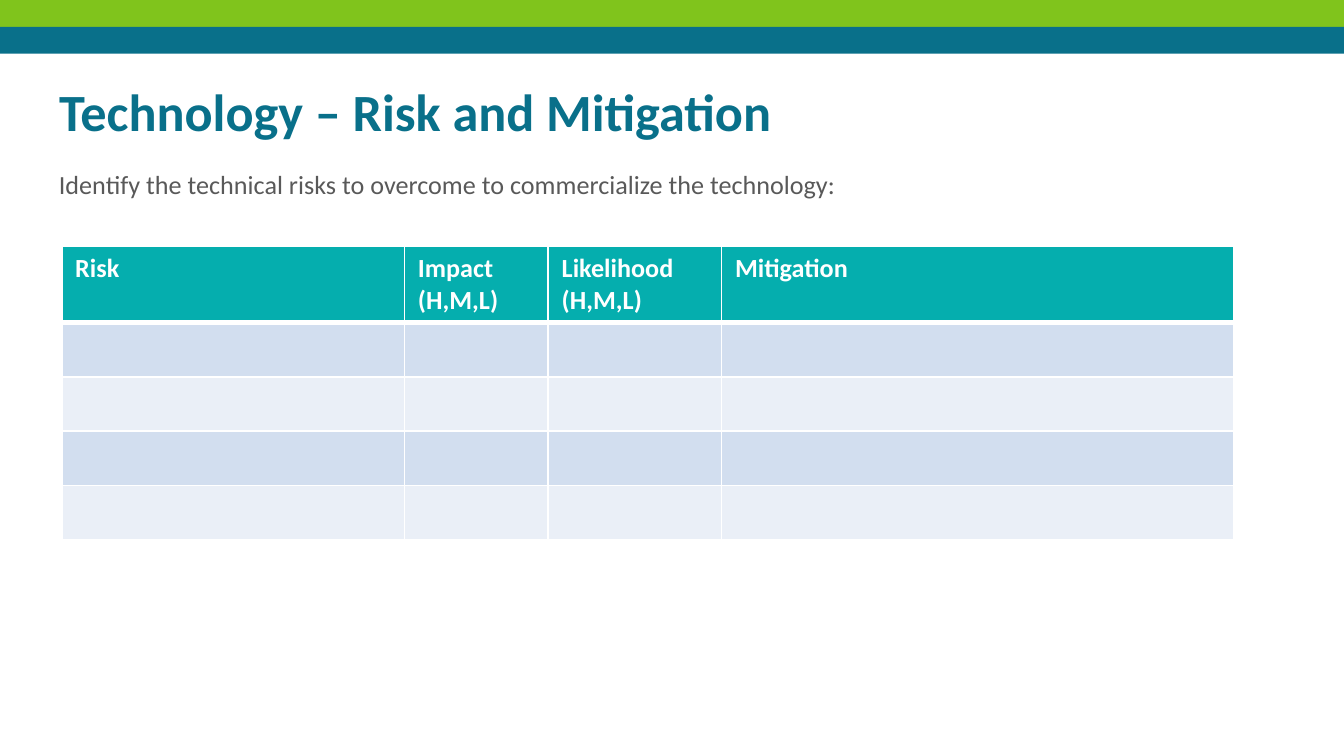
from lxml import etree
from pptx import Presentation
from pptx.dml.color import RGBColor
from pptx.enum.shapes import MSO_SHAPE
from pptx.enum.text import MSO_ANCHOR, PP_ALIGN
from pptx.oxml.ns import qn
from pptx.util import Inches, Pt

RECT = MSO_SHAPE.RECTANGLE
TOP, LEFT = MSO_ANCHOR.TOP, PP_ALIGN.LEFT

BLUE = RGBColor(0x09, 0x70, 0x8A)
GREEN = RGBColor(0x80, 0xC4, 0x1C)
TEAL = RGBColor(0x05, 0xAE, 0xAE)
GRAY = RGBColor(0x59, 0x59, 0x59)
WHITE = RGBColor(0xFF, 0xFF, 0xFF)
BANDS = [RGBColor(0xD2, 0xDE, 0xEF), RGBColor(0xEA, 0xEF, 0xF7)]

TITLE = "Technology – Risk and Mitigation"
PROMPT = "Identify the technical risks to overcome to commercialize the technology:"
COLUMNS = [("Risk", 2.55), ("Impact (H,M,L)", 1.07),
           ("Likelihood (H,M,L)", 1.29), ("Mitigation", 3.81)]
RISK_ROWS = 4
STRIPES = [GREEN, BLUE]

SLIDE_W = 10
SLIDE_H = SLIDE_W * 9 / 16
STRIPE_H = 0.2
TABLE_X, TABLE_Y, TABLE_H, HEADER_H = 0.46, 1.83, 2.19, 0.57

TITLE_FONT = {"name": "Calibri", "size": Pt(28), "bold": True}
BODY_FONT = {"name": "Calibri", "size": Pt(14), "bold": False}
HEADER_FONT = {**BODY_FONT, "bold": True}


def write(tf, text, font, color):
    tf.word_wrap = True
    p = tf.paragraphs[0]
    p.alignment = LEFT
    r = p.add_run()
    r.text = text
    for name, value in font.items():
        setattr(r.font, name, value)
    r.font.color.rgb = color


def set_borders(cell, widths):
    """Draw white cell borders; widths maps side tags to points."""
    tc_pr = cell._tc.get_or_add_tcPr()
    for i, (side, width) in enumerate(widths.items()):
        ln = etree.Element(qn(f"a:{side}"), w=str(Pt(width)))
        fill = etree.SubElement(ln, qn("a:solidFill"))
        etree.SubElement(fill, qn("a:srgbClr"), val=str(WHITE))
        tc_pr.insert(i, ln)


prs = Presentation()
prs.slide_width, prs.slide_height = Inches(SLIDE_W), Inches(SLIDE_H)
s = prs.slides.add_slide(prs.slide_layouts[5])

for i, color in enumerate(STRIPES):
    sp = s.shapes.add_shape(RECT, 0, Inches(i * STRIPE_H),
                            Inches(SLIDE_W), Inches(STRIPE_H))
    sp.shadow.inherit = False
    sp.fill.solid()
    sp.fill.fore_color.rgb = color
    sp.line.fill.background()

title = s.shapes.title
title.left, title.top = Inches(0.34), Inches(0.49)
title.width, title.height = Inches(9.32), Inches(0.63)
tf = title.text_frame
tf.vertical_anchor = TOP
for side in ("left", "top", "right", "bottom"):
    setattr(tf, f"margin_{side}", Inches(0.1))
write(tf, TITLE, TITLE_FONT, BLUE)

prompt = s.shapes.add_textbox(Inches(0.34), Inches(1.2), Inches(7.74), Inches(0.41))
write(prompt.text_frame, PROMPT, BODY_FONT, GRAY)

table_w = sum(width for _, width in COLUMNS)
table = s.shapes.add_table(RISK_ROWS + 1, len(COLUMNS), Inches(TABLE_X), Inches(TABLE_Y),
                           Inches(table_w), Inches(TABLE_H)).table
for column, (_, width) in zip(table.columns, COLUMNS):
    column.width = Inches(width)
for i, row in enumerate(table.rows):
    row.height = Inches((TABLE_H - HEADER_H) / RISK_ROWS if i else HEADER_H)
    for cell, (heading, _) in zip(row.cells, COLUMNS):
        cell.fill.solid()
        cell.fill.fore_color.rgb = BANDS[(i - 1) % 2] if i else TEAL
        set_borders(cell, {"lnL": 1, "lnR": 1, "lnT": 3 if i == 1 else 1,
                           "lnB": 3 if i == 0 else 1})
        if i == 0:
            write(cell.text_frame, heading, HEADER_FONT, WHITE)

prs.save("out.pptx")
